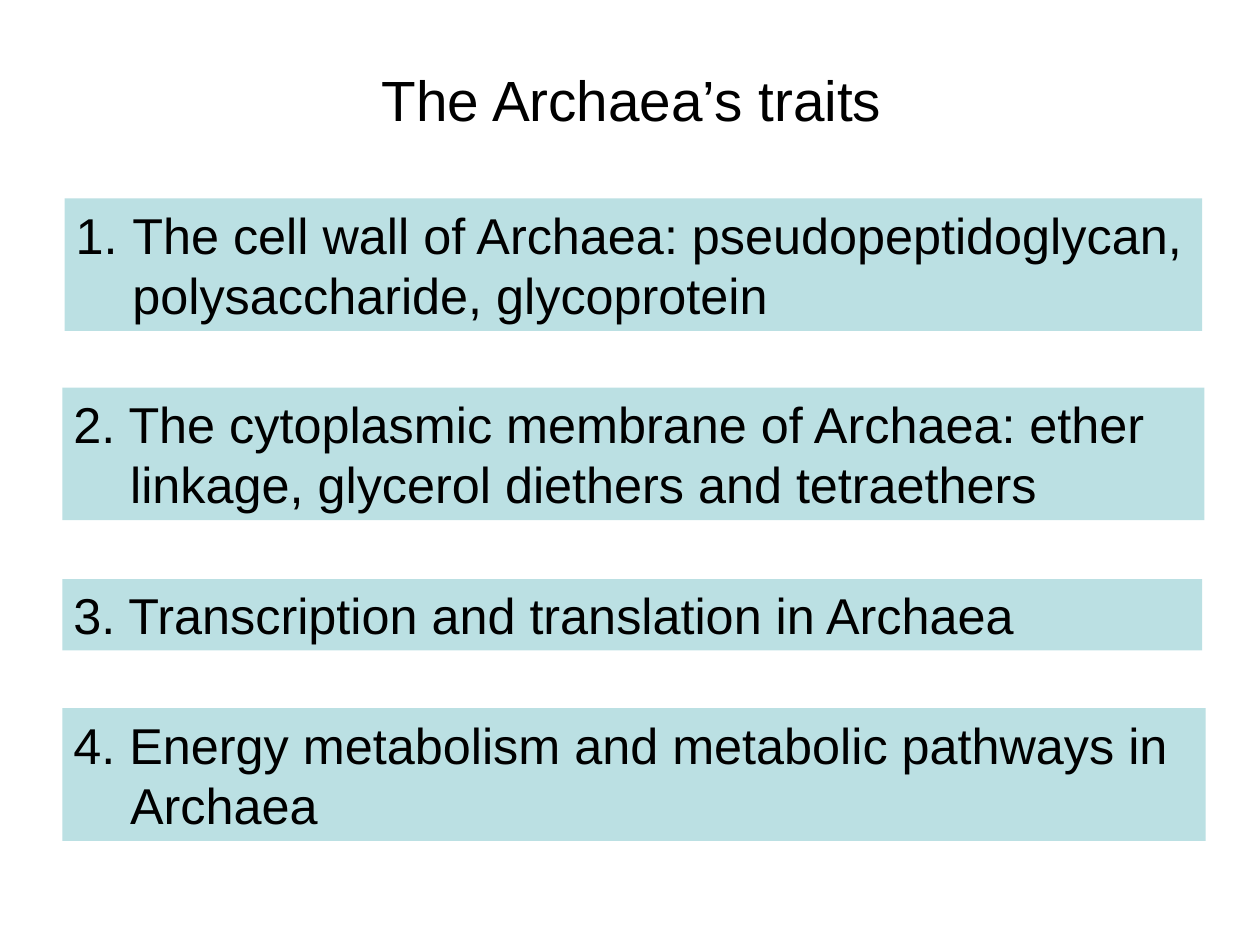
"""Build the slide listing the traits of the Archaea."""
from dataclasses import dataclass

from lxml.etree import SubElement
from pptx import Presentation
from pptx.dml.color import RGBColor
from pptx.enum.shapes import MSO_SHAPE as Preset
from pptx.enum.text import MSO_ANCHOR as Anchor, MSO_AUTO_SIZE as AutoSize, PP_ALIGN as Align
from pptx.oxml.ns import qn
from pptx.shapes.autoshape import Shape
from pptx.slide import Slide
from pptx.util import Emu, Pt

EMU_PER_PX = 9144


@dataclass(frozen=True)
class Theme:
    font: str = "Arial"
    ink: RGBColor = RGBColor(0x00, 0x00, 0x00)
    panel: RGBColor = RGBColor(0xBB, 0xE0, 0xE3)
    title_size: int = 36
    trait_size: int = 32


@dataclass(frozen=True)
class Trait:
    text: str
    left: int
    top: int
    width: int
    height: int = 117
    numbered: bool = False


THEME = Theme()
HANGING = 50
TRAITS = [
    Trait("The cell wall of Archaea: pseudopeptidoglycan, polysaccharide, glycoprotein",
          57, 175, 1004, numbered=True),
    Trait("2. The cytoplasmic membrane of Archaea: ether linkage, glycerol diethers and tetraethers",
          55, 342, 1008),
    Trait("3. Transcription and translation in Archaea", 55, 511, 1006, height=63),
    Trait("4. Energy metabolism and metabolic pathways in Archaea", 55, 625, 1009),
]


def px(length: int) -> Emu:
    return Emu(length * EMU_PER_PX)


def write_text(box: Shape, text: str, *, size: int, wrap: bool = True,
               hanging: int = 0, numbered: bool = False) -> None:
    frame = box.text_frame
    frame.word_wrap = wrap
    frame.auto_size = AutoSize.SHAPE_TO_FIT_TEXT
    frame.vertical_anchor = Anchor.TOP
    frame.margin_left = frame.margin_right = px(10)
    frame.margin_top = frame.margin_bottom = px(5)
    para = frame.paragraphs[0]
    para.alignment = Align.LEFT
    properties = para._p.get_or_add_pPr()
    if hanging:
        properties.set("marL", str(px(hanging)))
        properties.set("indent", str(-px(hanging)))
    if numbered:
        SubElement(properties, qn("a:buFont"), typeface=THEME.font)
        SubElement(properties, qn("a:buAutoNum"), type="arabicPeriod")
    span = para.add_run()
    span.text = text
    span.font.name = THEME.font
    span.font.size = Pt(size)
    span.font.color.rgb = THEME.ink


def add_title(page: Slide, text: str) -> None:
    title = page.shapes.title
    title.left, title.top, title.width, title.height = map(px, (327, 52, 465, 70))
    write_text(title, text, size=THEME.title_size, wrap=False)


def add_trait(page: Slide, trait: Trait) -> None:
    box = page.shapes.add_shape(
        Preset.RECTANGLE, px(trait.left), px(trait.top), px(trait.width), px(trait.height))
    box.shadow.inherit = False
    box.fill.solid()
    box.fill.fore_color.rgb = THEME.panel
    box.line.fill.background()
    write_text(box, trait.text, size=THEME.trait_size, hanging=HANGING, numbered=trait.numbered)


def main() -> None:
    deck = Presentation()
    deck.slide_width, deck.slide_height = px(1112), px(833)
    page = deck.slides.add_slide(deck.slide_layouts.get_by_name("Title Only"))
    add_title(page, "The Archaea’s traits")
    for trait in TRAITS:
        add_trait(page, trait)
    deck.save("out.pptx")


if __name__ == "__main__":
    main()
